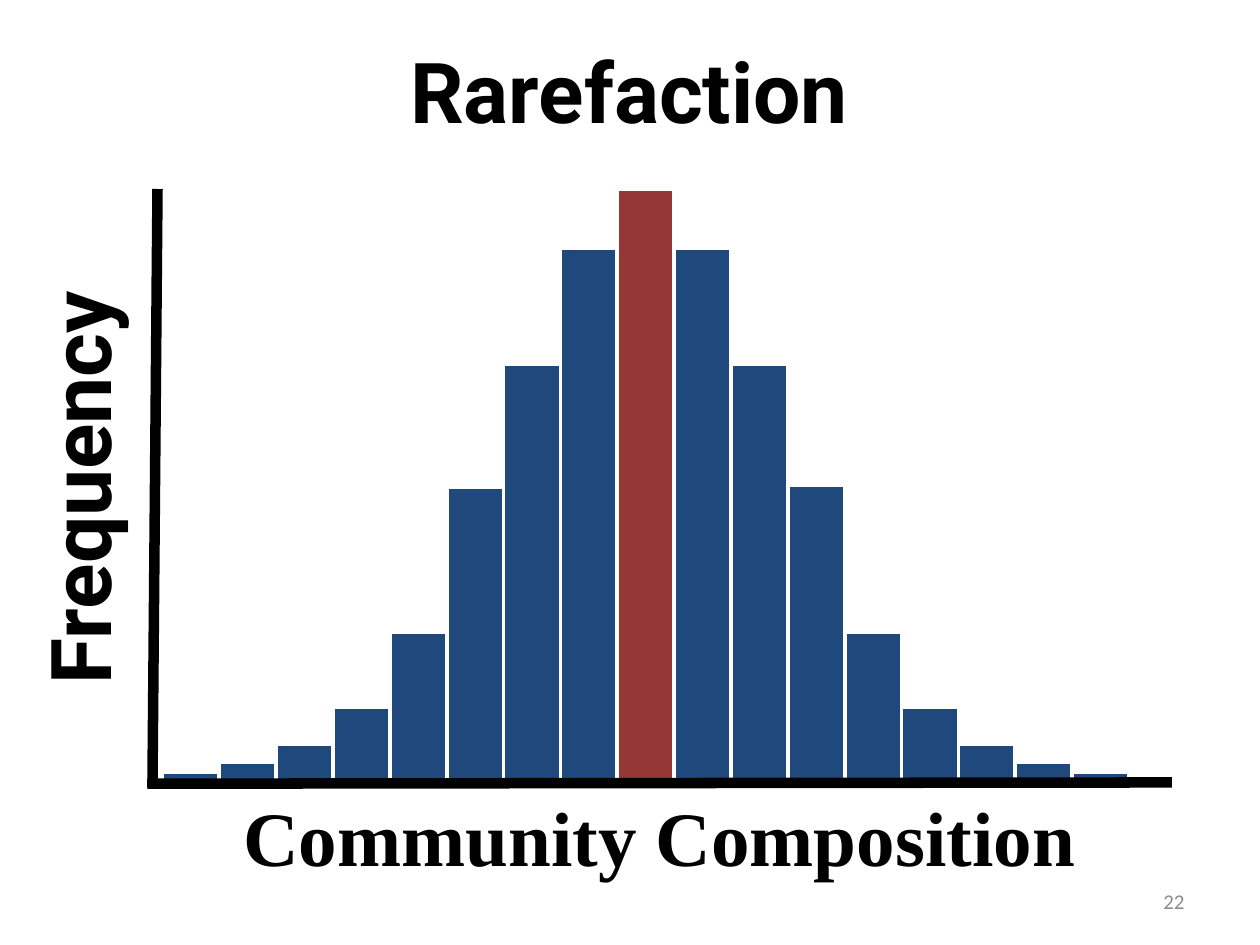
from pptx import Presentation
from pptx.dml.color import RGBColor
from pptx.enum.shapes import MSO_CONNECTOR, MSO_SHAPE
from pptx.enum.text import MSO_ANCHOR, PP_ALIGN
from pptx.oxml.ns import qn
from pptx.util import Inches, Pt
from lxml import etree

RECTANGLE = MSO_SHAPE.RECTANGLE
STRAIGHT = MSO_CONNECTOR.STRAIGHT
TOP, MIDDLE = MSO_ANCHOR.TOP, MSO_ANCHOR.MIDDLE
CENTER, RIGHT = PP_ALIGN.CENTER, PP_ALIGN.RIGHT

COLORS = {name: RGBColor.from_string(value) for name, value in {
    "bar": "1F497D",
    "peak": "953735",
    "gap": "FFFFFF",
    "ink": "000000",
    "number": "8C8C8C",
}.items()}

prs = Presentation()
prs.slide_width, prs.slide_height = Inches(10), Inches(7.5)
slide = prs.slides.add_slide(prs.slide_layouts[6])

# Histogram: one column per bar, all standing on the same baseline
BASELINE = 6.2
FIRST_LEFT, LAST_LEFT = 1.29, 8.51
BAR_WIDTH = 0.45
rising = [0.07, 0.15, 0.29, 0.59, 1.18, 2.33, 3.31, 4.23]
falling = [4.23, 3.31, 2.35, 1.18, 0.59, 0.29, 0.15, 0.07]
frequencies = rising + [4.7] + falling
peak = len(rising)
pitch = (LAST_LEFT - FIRST_LEFT) / (len(frequencies) - 1)

for column, frequency in enumerate(frequencies):
    bar = slide.shapes.add_shape(
        RECTANGLE, Inches(FIRST_LEFT + column * pitch), Inches(BASELINE - frequency),
        Inches(BAR_WIDTH), Inches(frequency))
    bar.shadow.inherit = False
    bar.fill.solid()
    bar.fill.fore_color.rgb = COLORS["peak" if column == peak else "bar"]
    bar.line.color.rgb = COLORS["gap"]
    bar.line.width = Pt(2)

# Labels: text, left, top, width, height, rotation, font, size, bold, colour, align, anchor
labels = [
    ("Frequency", -1.65, 3.35, 4.68, 1.04, 270, "Roboto", 48, True, "ink", CENTER, TOP),
    ("Community Composition", 1.17, 6.22, 8.13, 0.91, 0, "Times New Roman", 44, True,
     "ink", CENTER, TOP),
    ("Rarefaction", 0.33, 0.17, 9.33, 1.08, 0, "Roboto", 48, True, "ink", CENTER, MIDDLE),
    ("22", 7.17, 6.95, 2.33, 0.4, 0, "Calibri", 12, False, "number", RIGHT, MIDDLE),
]
for text, left, top, width, height, turn, font, size, bold, color, align, anchor in labels:
    label = slide.shapes.add_textbox(Inches(left), Inches(top), Inches(width), Inches(height))
    label.rotation = turn
    frame = label.text_frame
    frame.word_wrap = True
    frame.vertical_anchor = anchor
    frame.text = text
    paragraph = frame.paragraphs[0]
    paragraph.alignment = align
    run_font = paragraph.runs[0].font
    run_font.name, run_font.size, run_font.bold = font, Pt(size), bold
    run_font.color.rgb = COLORS[color]

# Axes: horizontal, then vertical
for ends in [(9.3, 6.21, 1.17, 6.22), (1.25, 1.5, 1.21, 6.25)]:
    axis = slide.shapes.add_connector(STRAIGHT, *map(Inches, ends))
    axis.line.color.rgb = COLORS["ink"]
    axis.line.width = Pt(6)
    etree.SubElement(axis._element.spPr, qn("a:effectLst"))

prs.save("out.pptx")
